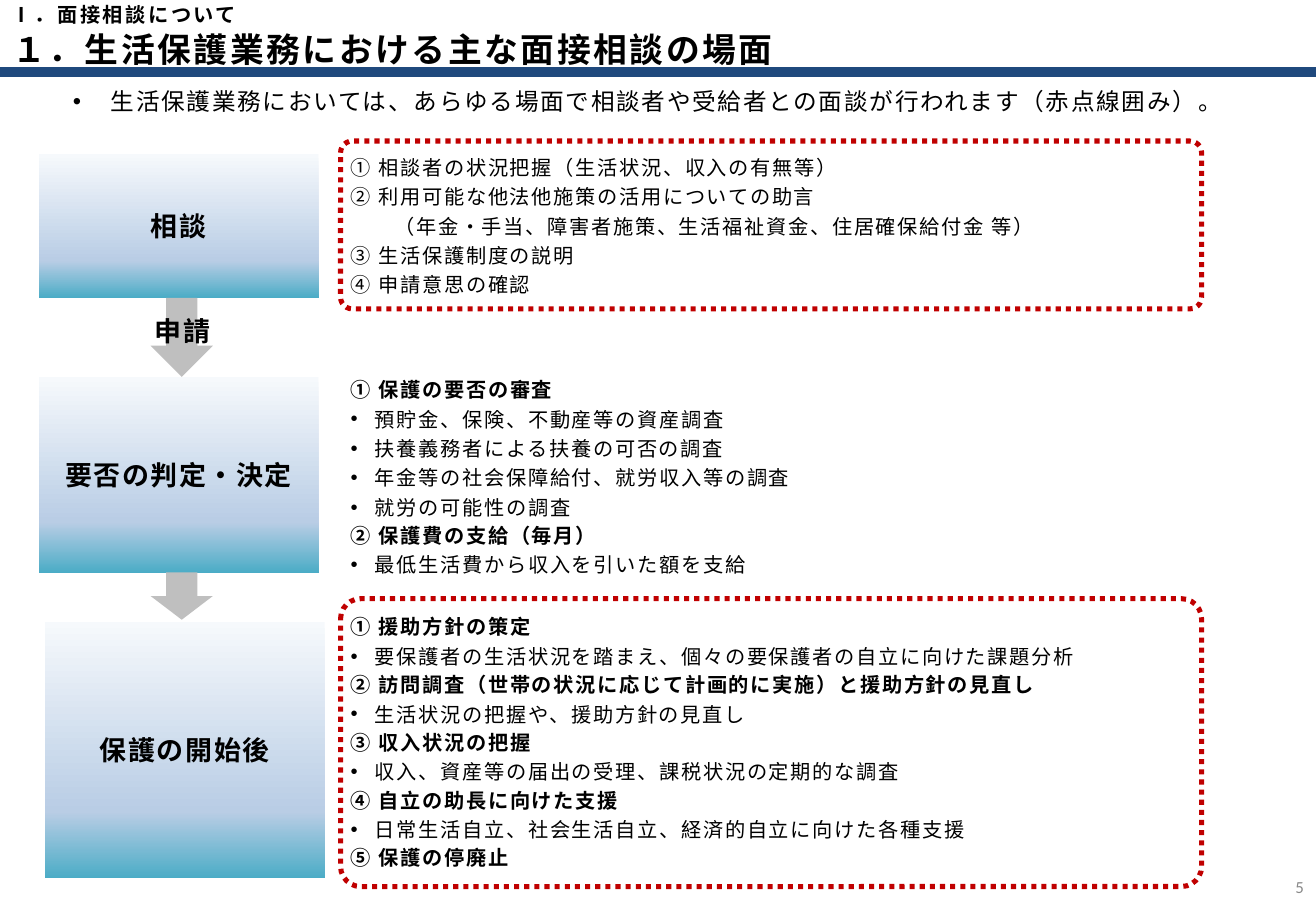
from copy import deepcopy

from lxml import etree
from pptx import Presentation
from pptx.dml.color import RGBColor
from pptx.enum.dml import MSO_LINE
from pptx.enum.shapes import MSO_CONNECTOR, MSO_SHAPE
from pptx.enum.text import MSO_ANCHOR, MSO_AUTO_SIZE, PP_ALIGN
from pptx.oxml.ns import qn
from pptx.util import Cm, Pt

LEFT, CENTER, RIGHT = PP_ALIGN.LEFT, PP_ALIGN.CENTER, PP_ALIGN.RIGHT
TOP, MIDDLE = MSO_ANCHOR.TOP, MSO_ANCHOR.MIDDLE
NO_AUTOFIT = MSO_AUTO_SIZE.NONE
RECTANGLE, ROUNDED = MSO_SHAPE.RECTANGLE, MSO_SHAPE.ROUNDED_RECTANGLE
DOWN_ARROW = MSO_SHAPE.DOWN_ARROW
STRAIGHT = MSO_CONNECTOR.STRAIGHT
DOTTED = MSO_LINE.ROUND_DOT

FONT = "Noto Sans CJK JP"
BULLET = "•"
NAVY, RED, GRAY, PAGE_NUMBER_GRAY = "1F497D", "C00000", "BFBFBF", "898989"
GRADIENT = [(0, "F6F9FC"), (0.74, "B9CDE5"), (1, "4BACC6")]

PAGE_WIDTH, PAGE_HEIGHT = 27.51, 19.05
HEADER_WIDTH, RULE_TOP = 23.04, 1.5
LABEL_WIDTH = 5.85
DETAIL_LEFT, DETAIL_WIDTH = 7.08, 19.4
FRAME_LEFT, FRAME_WIDTH, FRAME_ROUNDING = 7.12, 18, 0.07
ARROW_LEFT, ARROW_WIDTH = 3.15, 1.3
ITEM_SPACING, HEADING_SPACING = 3, 2.4

CONSULTATION = [
    "① 相談者の状況把握（生活状況、収入の有無等）",
    "② 利用可能な他法他施策の活用についての助言",
    "　　（年金・手当、障害者施策、生活福祉資金、住居確保給付金 等）",
    "③ 生活保護制度の説明",
    "④ 申請意思の確認",
]
DECISION = [
    "① 保護の要否の審査",
    "•預貯金、保険、不動産等の資産調査",
    "•扶養義務者による扶養の可否の調査",
    "•年金等の社会保障給付、就労収入等の調査",
    "•就労の可能性の調査",
    "② 保護費の支給（毎月）",
    "•最低生活費から収入を引いた額を支給",
]
AFTER_START = [
    "① 援助方針の策定",
    "•要保護者の生活状況を踏まえ、個々の要保護者の自立に向けた課題分析",
    "② 訪問調査（世帯の状況に応じて計画的に実施）と援助方針の見直し",
    "•生活状況の把握や、援助方針の見直し",
    "③ 収入状況の把握",
    "•収入、資産等の届出の受理、課税状況の定期的な調査",
    "④ 自立の助長に向けた支援",
    "•日常生活自立、社会生活自立、経済的自立に向けた各種支援",
    "⑤ 保護の停廃止",
]


def color(hex_code):
    return RGBColor.from_string(hex_code)


def place(shape, box):
    shape.left, shape.top, shape.width, shape.height = map(Cm, box)


def add_bullet(para, indent):
    props = para._p.get_or_add_pPr()
    props.set("marL", str(Cm(indent)))
    props.set("indent", str(-Cm(indent)))
    etree.SubElement(props, qn("a:buFont")).set("typeface", "Arial")
    etree.SubElement(props, qn("a:buChar")).set("char", BULLET)


def set_font(font, size, bold, tracking, hex_code, name):
    """Set the font for Latin and East Asian text; tracking is in points."""
    font.size = Pt(size)
    font.bold = bold
    font.color.rgb = color(hex_code)
    font.name = name
    font._rPr.set("spc", str(round(tracking * 100)))
    etree.SubElement(font._rPr, qn("a:ea")).set("typeface", name)


def write(shape, lines, size, bold=False, bold_headings=False, align=LEFT,
          anchor=TOP, indent=0.51, tracking=1, hex_code="000000", name=FONT):
    """Fill a shape with lines; a leading bullet sign makes a list item."""
    frame = shape.text_frame
    frame.word_wrap = True
    frame.auto_size = NO_AUTOFIT
    frame.vertical_anchor = anchor
    for index, line in enumerate(lines):
        para = frame.paragraphs[0] if index == 0 else frame.add_paragraph()
        is_item = line.startswith(BULLET)
        is_heading = bold_headings and not is_item
        para.text = line.removeprefix(BULLET)
        para.alignment = align
        if is_item:
            add_bullet(para, indent)
        para.space_before = Pt(HEADING_SPACING if is_heading else ITEM_SPACING)
        set_font(para.font, size, bold or is_heading, tracking, hex_code, name)
    frame.paragraphs[0].space_before = Pt(0)


def add_text(page, box, lines, size, **style):
    text_box = page.shapes.add_textbox(*map(Cm, box))
    write(text_box, lines, size, **style)


def add_plain_shape(page, kind, box):
    shape = page.shapes.add_shape(kind, *map(Cm, box))
    shape.shadow.inherit = False
    shape.line.fill.background()
    return shape


def add_header(page):
    rule = page.shapes.add_connector(
        STRAIGHT, 0, Cm(RULE_TOP), Cm(PAGE_WIDTH), Cm(RULE_TOP))
    rule.line.color.rgb = color(NAVY)
    rule.line.width = Pt(6)
    etree.SubElement(rule._element.spPr, qn("a:effectLst"))
    style = {"bold": True, "anchor": MIDDLE, "tracking": 1.5}
    title = page.shapes.title
    place(title, (0, 0.52, HEADER_WIDTH, 0.99))
    write(title, ["１．生活保護業務における主な面接相談の場面"], 20, **style)
    add_text(page, (0, 0.03, HEADER_WIDTH, 0.53), ["Ⅰ．面接相談について"], 12, **style)


def add_introduction(page, box):
    body = page.placeholders[1]
    place(body, box)
    sentence = ("•生活保護業務においては、あらゆる場面で相談者や受給者との面談が"
                "行われます（赤点線囲み）。")
    write(body, [sentence], 14, indent=0.79)


def add_frame(page, box):
    frame = add_plain_shape(page, ROUNDED, box)
    frame.adjustments[0] = FRAME_ROUNDING
    frame.fill.background()
    frame.line.color.rgb = color(RED)
    frame.line.width = Pt(3)
    frame.line.dash_style = DOTTED


def add_label(page, box, label):
    panel = add_plain_shape(page, RECTANGLE, box)
    fill = panel.fill
    fill.gradient()
    fill.gradient_angle = 270
    stop_list = panel._element.spPr.find(".//" + qn("a:gsLst"))
    stop_list.append(deepcopy(stop_list[0]))
    for stop, (position, hex_code) in zip(fill.gradient_stops, GRADIENT):
        stop.position = position
        stop.color.rgb = color(hex_code)
    write(panel, [label], 16, bold=True, align=CENTER, anchor=MIDDLE)


def add_stage(page, box, label, details, rise=0, frame_margins=None, **style):
    """Draw a label in the box and its details on the right.

    The details start by rise above the box; frame_margins are how far
    the dotted frame reaches above and below it.
    """
    left, top, width, height = box
    if frame_margins:
        above, below = frame_margins
        add_frame(page, (FRAME_LEFT, top - above, FRAME_WIDTH, height + above + below))
    detail_box = (DETAIL_LEFT, top - rise, DETAIL_WIDTH, height + rise)
    add_text(page, detail_box, details, 12, **style)
    add_label(page, box, label)


def add_arrow(page, top, height):
    arrow = add_plain_shape(page, DOWN_ARROW, (ARROW_LEFT, top, ARROW_WIDTH, height))
    arrow.fill.solid()
    arrow.fill.fore_color.rgb = color(GRAY)


def add_page_number(page, box):
    add_text(page, box, ["5"], 10, align=RIGHT, anchor=MIDDLE, tracking=0,
             hex_code=PAGE_NUMBER_GRAY, name="Calibri")


def main():
    deck = Presentation()
    deck.slide_width, deck.slide_height = Cm(PAGE_WIDTH), Cm(PAGE_HEIGHT)
    page = deck.slides.add_slide(deck.slide_layouts[1])
    add_header(page)
    add_introduction(page, (1.27, 1.7, 25, 0.86))
    add_stage(page, (0.81, 3.23, LABEL_WIDTH, 3), "相談", CONSULTATION,
              frame_margins=(0.28, 0.23), anchor=MIDDLE)
    add_stage(page, (0.81, 7.89, LABEL_WIDTH, 4.09), "要否の判定・決定", DECISION,
              rise=0.12, bold_headings=True)
    add_stage(page, (0.94, 13, LABEL_WIDTH, 5.37), "保護の開始後", AFTER_START,
              rise=0.27, frame_margins=(0.48, 0.17), bold_headings=True)
    for top, height in [(6.23, 1.65), (11.97, 0.99)]:
        add_arrow(page, top, height)
    add_text(page, (2.17, 6.45, 3.28, 0.99), ["申請"], 16, bold=True, align=CENTER)
    add_page_number(page, (26.47, 18.03, 1.04, 1.02))
    deck.save("out.pptx")


if __name__ == "__main__":
    main()
